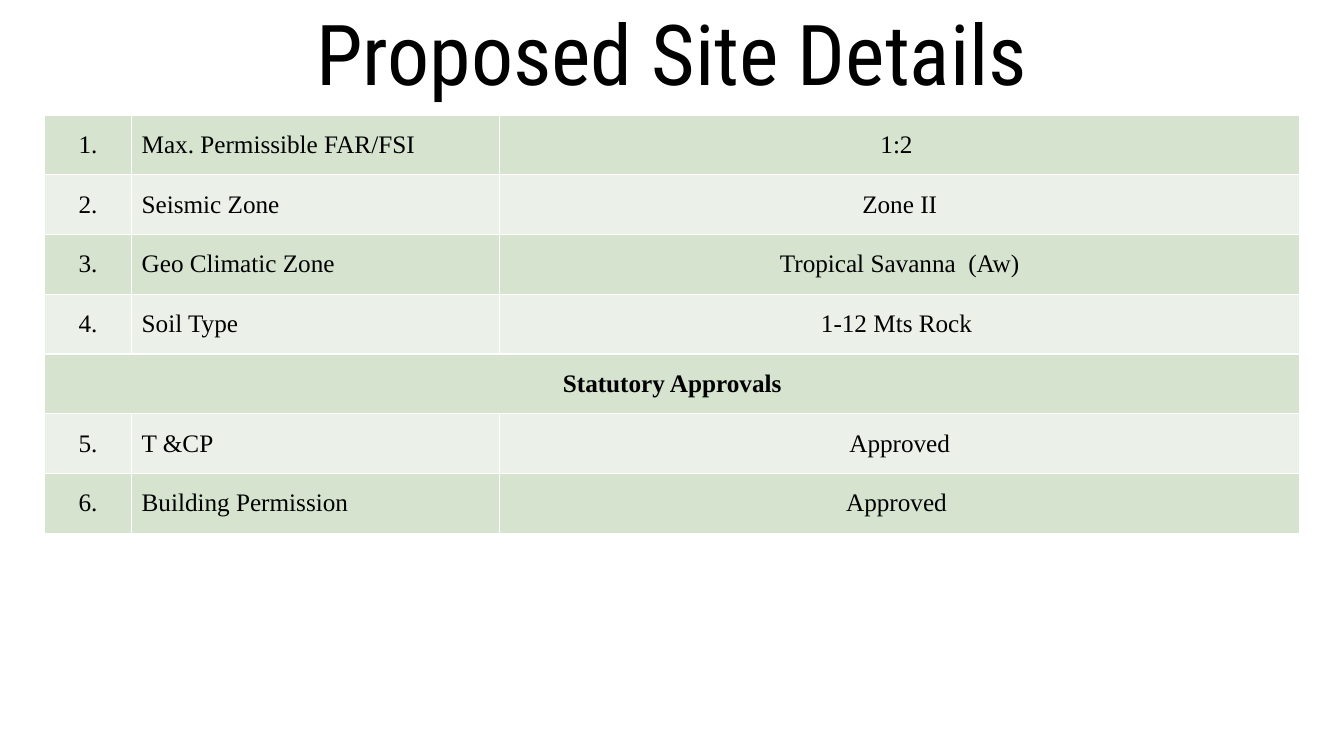
from lxml import etree
from pptx import Presentation
from pptx.dml.color import RGBColor
from pptx.enum import text as t
from pptx.oxml import ns
from pptx.util import Pt

COLORS = {"ink": "000000", "border": "FFFFFF", "odd": "D5E3CF", "even": "EBF1E9"}
CENTER, LEFT = t.PP_ALIGN.CENTER, t.PP_ALIGN.LEFT


def write_text(frame, content, font="Times New Roman", size=18, bold=False,
               align=LEFT, spacing=None):
    paragraph = frame.paragraphs[0]
    paragraph.alignment = align
    if spacing:
        paragraph.line_spacing = spacing
    run = paragraph.add_run()
    run.text = content
    run.font.name, run.font.size, run.font.bold = font, Pt(size), bold
    run.font.color.rgb = RGBColor.from_string(COLORS["ink"])


class SiteSlide:
    def __init__(self, slide, border_width=1):
        self.slide = slide
        self.border_width = border_width

    def title(self, content, left, top, width, height):
        heading = self.slide.shapes.add_textbox(Pt(left), Pt(top), Pt(width), Pt(height))
        frame = heading.text_frame
        frame.word_wrap = True
        frame.vertical_anchor = t.MSO_ANCHOR.BOTTOM
        write_text(frame, content, font="Roboto Condensed", size=60,
                   align=CENTER, spacing=0.9)

    def borders(self, cell):
        properties = cell._tc.get_or_add_tcPr()
        for index, side in enumerate(("lnL", "lnR", "lnT", "lnB")):
            line = etree.Element(ns.qn(f"a:{side}"), w=str(Pt(self.border_width)))
            fill = etree.SubElement(line, ns.qn("a:solidFill"))
            etree.SubElement(fill, ns.qn("a:srgbClr"), val=COLORS["border"])
            properties.insert(index, line)

    def table(self, rows, left, top, widths, row_height):
        """A row with a single text spans all columns as a bold heading."""
        details = self.slide.shapes.add_table(
            len(rows), len(widths), Pt(left), Pt(top),
            Pt(sum(widths)), Pt(row_height * len(rows))).table
        details.first_row = details.horz_banding = False
        for column, width in zip(details.columns, widths):
            column.width = Pt(width)
        for r, entries in enumerate(rows):
            details.rows[r].height = Pt(row_height)
            is_heading = len(entries) == 1
            for c in range(len(widths)):
                cell = details.cell(r, c)
                cell.fill.solid()
                cell.fill.fore_color.rgb = RGBColor.from_string(
                    COLORS["even" if r % 2 else "odd"])
                cell.vertical_anchor = t.MSO_ANCHOR.MIDDLE
                self.borders(cell)
            if is_heading:
                details.cell(r, 0).merge(details.cell(r, len(widths) - 1))
            for c, entry in enumerate(entries):
                write_text(details.cell(r, c).text_frame, entry, bold=is_heading,
                           align=LEFT if c == 1 else CENTER)


def main():
    deck = Presentation()
    deck.slide_width, deck.slide_height = Pt(960), Pt(540)
    site = SiteSlide(deck.slides.add_slide(deck.slide_layouts[6]))

    # Title
    site.title("Proposed Site Details", 120, 1.5, 720, 76.3)

    # Site details and approvals
    site.table([
        ("1.", "Max. Permissible FAR/FSI", "1:2 "),
        ("2.", "Seismic Zone", "Zone II"),
        ("3.", "Geo Climatic Zone", "Tropical Savanna  (Aw)"),
        ("4.", "Soil Type", "1-12 Mts Rock "),
        ("Statutory Approvals",),
        ("5.", "T &CP", "Approved"),
        ("6.", "Building Permission", "Approved "),
    ], 31.8, 82.1, (62.2, 262.8, 571.7), 42.7)

    deck.save("out.pptx")


if __name__ == "__main__":
    main()
